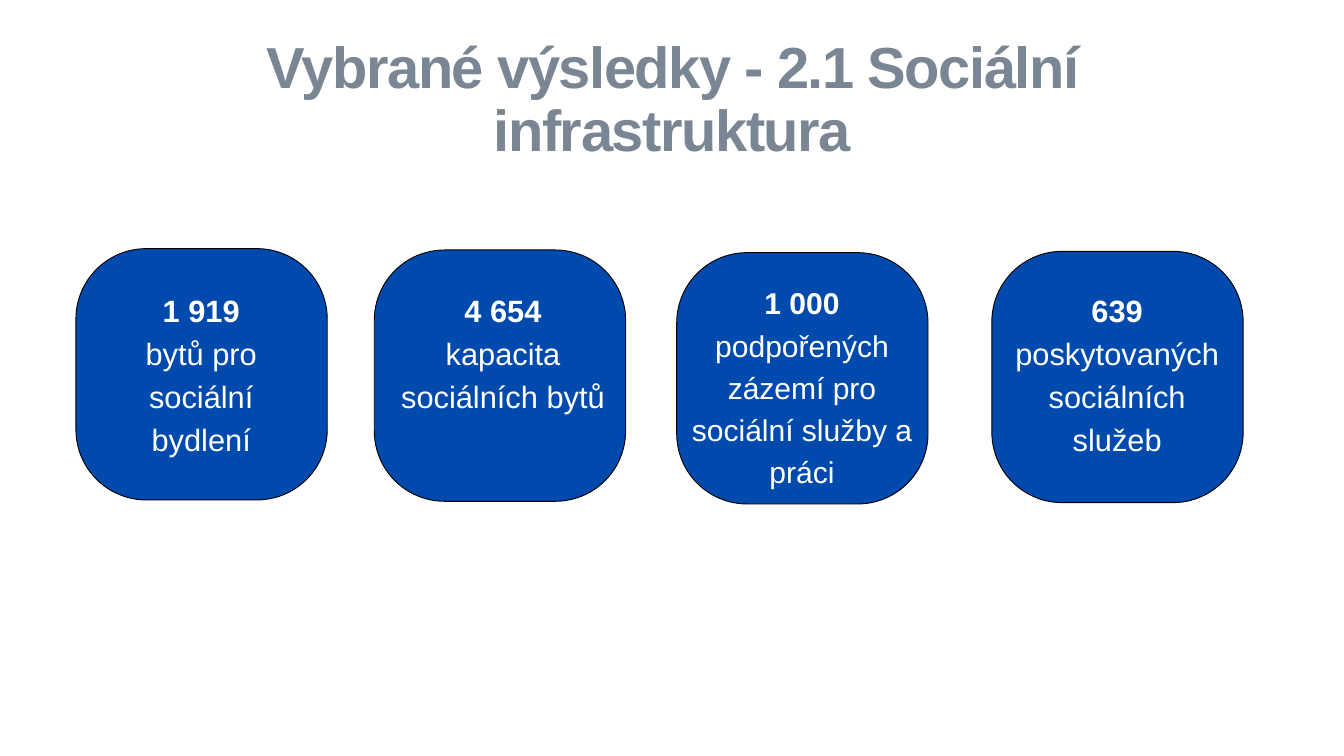
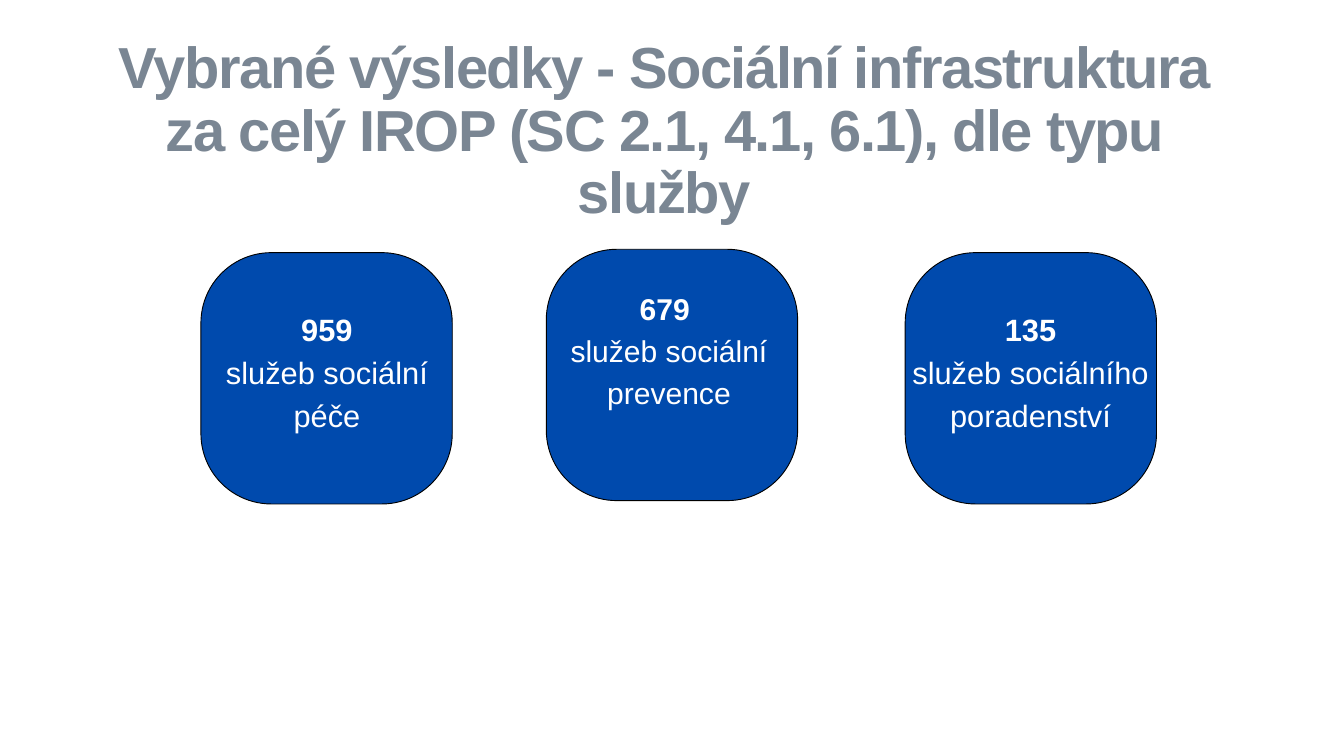
from pptx import Presentation
from pptx import util as u
from pptx.dml.color import RGBColor
from pptx.enum import shapes, text

BLUE, GREY, WHITE, BLACK = "004AAD", "7A8693", "FFFFFF", "000000"
FONT = "Arial"

presentation = Presentation()
presentation.slide_width = u.Inches(20)
presentation.slide_height = u.Inches(11.25)
COLUMN = presentation.slide_width / 20
ROW = presentation.slide_height / 11.25
CARD = 3.74
CARD_RADIUS = 0.28


def paint(color_format, color):
    color_format.rgb = RGBColor.from_string(color)


def add_text(slide, box, lines, size, leading, color):
    left, top, width, height = box
    shape = slide.shapes.add_textbox(
        int(left * COLUMN), int(top * ROW), int(width * COLUMN), int(height * ROW))
    frame = shape.text_frame
    frame.word_wrap = True
    frame.margin_left = frame.margin_right = frame.margin_top = frame.margin_bottom = 0
    frame.text = "\n".join(lines)
    for number, paragraph in enumerate(frame.paragraphs):
        paragraph.alignment = text.PP_ALIGN.CENTER
        paragraph.line_spacing = u.Pt(leading)
        for run in paragraph.runs:
            run.font.name = FONT
            run.font.size = u.Pt(size)
            run.font.bold = number == 0
            paint(run.font.color, color)
    return frame


LARGE, SMALL = (33, 46.2), (32.2, 45.1)

slides = [
    ("Vybrané výsledky - 2.1 Sociální infrastruktura", (2.39, 0.56, 15.23, 2.01), [
        (1.13, 3.7, (1.03, 4.25, 3.93, 2.6), LARGE,
         ["1 919", "bytů pro", "sociální", "bydlení"]),
        (5.57, 3.72, (5.57, 4.25, 3.83, 1.96), LARGE,
         ["4 654", "kapacita sociálních bytů"]),
        (10.07, 3.76, (10.02, 4.15, 3.83, 3.16), SMALL,
         ["1 000", "podpořených zázemí pro", "sociální služby a práci"]),
        (14.76, 3.74, (14.66, 4.25, 3.93, 2.6), LARGE,
         ["639", "poskytovaných", "sociálních", "služeb"]),
    ]),
    ("Vybrané výsledky - Sociální infrastruktura za celý IROP (SC 2.1, 4.1, 6.1), dle typu služby",
     (1.69, 0.56, 16.39, 2.94), [
        (2.99, 3.76, (2.9, 4.53, 3.93, 1.96), LARGE,
         ["959", "služeb sociální péče"]),
        (8.13, 3.71, (8.04, 4.23, 3.83, 1.93), SMALL,
         ["679 ", "služeb sociální prevence"]),
        (13.47, 3.76, (13.37, 4.53, 3.93, 1.96), LARGE,
         ["135", "služeb sociálního poradenství"]),
    ]),
]

for title, title_box, cards in slides:
    slide = presentation.slides.add_slide(presentation.slide_layouts[6])
    title_frame = add_text(slide, title_box, [title], 62, 67, GREY)
    title_frame.paragraphs[0].runs[0].font._element.set("spc", "-160")

    for left, top, label_box, (size, leading), lines in cards:
        card = slide.shapes.add_shape(
            shapes.MSO_SHAPE.ROUNDED_RECTANGLE,
            int(left * COLUMN), int(top * ROW), int(CARD * COLUMN), int(CARD * ROW))
        card.adjustments[0] = CARD_RADIUS
        card.shadow.inherit = False
        card.fill.solid()
        paint(card.fill.fore_color, BLUE)
        paint(card.line.color, BLACK)
        card.line.width = u.Pt(1)
        add_text(slide, label_box, lines, size, leading, WHITE)

presentation.save("out.pptx")
